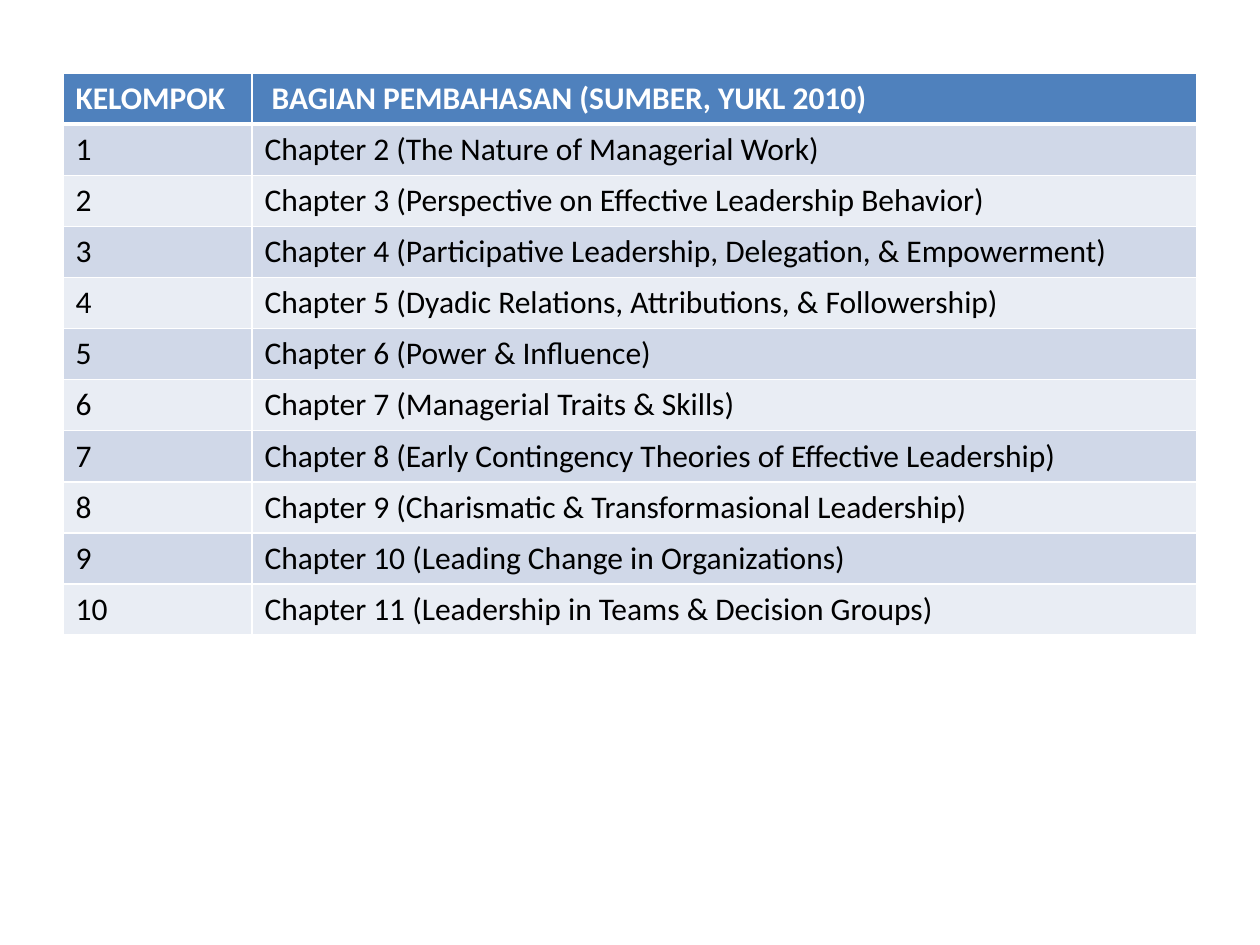
import pptx
import pptx.util
import pptx.dml.color
import pptx.oxml
import pptx.oxml.ns
import lxml.etree

Inches = pptx.util.Inches
RGBColor = pptx.dml.color.RGBColor

WHITE = RGBColor(0xFF, 0xFF, 0xFF)
BLACK = RGBColor(0x00, 0x00, 0x00)
BLUE = RGBColor(0x4F, 0x81, 0xBD)
BANDS = [RGBColor(0xE9, 0xED, 0xF4), RGBColor(0xD0, 0xD8, 0xE8)]

HEAD = ("KELOMPOK", " BAGIAN PEMBAHASAN (SUMBER, YUKL 2010)")
TOPICS = [
    "The Nature of Managerial Work",
    "Perspective on Effective Leadership Behavior",
    "Participative Leadership, Delegation, & Empowerment",
    "Dyadic Relations, Attributions, & Followership",
    "Power & Influence",
    "Managerial Traits & Skills",
    "Early Contingency Theories of Effective Leadership",
    "Charismatic & Transformasional Leadership",
    "Leading Change in Organizations",
    "Leadership in Teams & Decision Groups",
]


def write(cell, text, size=18, color=BLACK, bold=False):
    run = cell.text_frame.paragraphs[0].add_run()
    run.text = text
    run.font.name = "Calibri"
    run.font.size = pptx.util.Pt(size)
    run.font.bold = bold
    run.font.color.rgb = color


def border(cell, side, width, color=WHITE):
    qn = pptx.oxml.ns.qn
    line = lxml.etree.Element(qn("a:" + side), w=str(pptx.util.Pt(width)))
    fill = lxml.etree.SubElement(line, qn("a:solidFill"))
    lxml.etree.SubElement(fill, qn("a:srgbClr"), val=str(color))
    return line


deck = pptx.Presentation()
deck.slide_width = Inches(10)
deck.slide_height = Inches(7.5)
slide = deck.slides.add_slide(deck.slide_layouts[6])

# Table of groups and chapters
rows = [HEAD] + [
    (str(num), f"Chapter {num + 1} ({topic})")
    for num, topic in enumerate(TOPICS, 1)
]
table = slide.shapes.add_table(
    len(rows), 2, Inches(0.5), Inches(0.58), Inches(9), Inches(4.46)
).table
table.columns[0].width = Inches(1.5)
table.columns[1].width = Inches(7.5)

# Header and banded rows
for r, row in enumerate(rows):
    for c, text in enumerate(row):
        cell = table.cell(r, c)
        write(cell, text, color=BLACK if r else WHITE, bold=r == 0)
        cell.fill.solid()
        cell.fill.fore_color.rgb = BANDS[r % 2] if r else BLUE

        # White grid, with a thick rule below the header
        top = 3 if r == 1 else 1
        base = 3 if r == 0 else 1
        sides = {"lnL": 1, "lnR": 1, "lnT": top, "lnB": base}
        props = cell._tc.get_or_add_tcPr()
        for spot, (side, width) in enumerate(sides.items()):
            props.insert(spot, border(cell, side, width))

deck.save("out.pptx")
